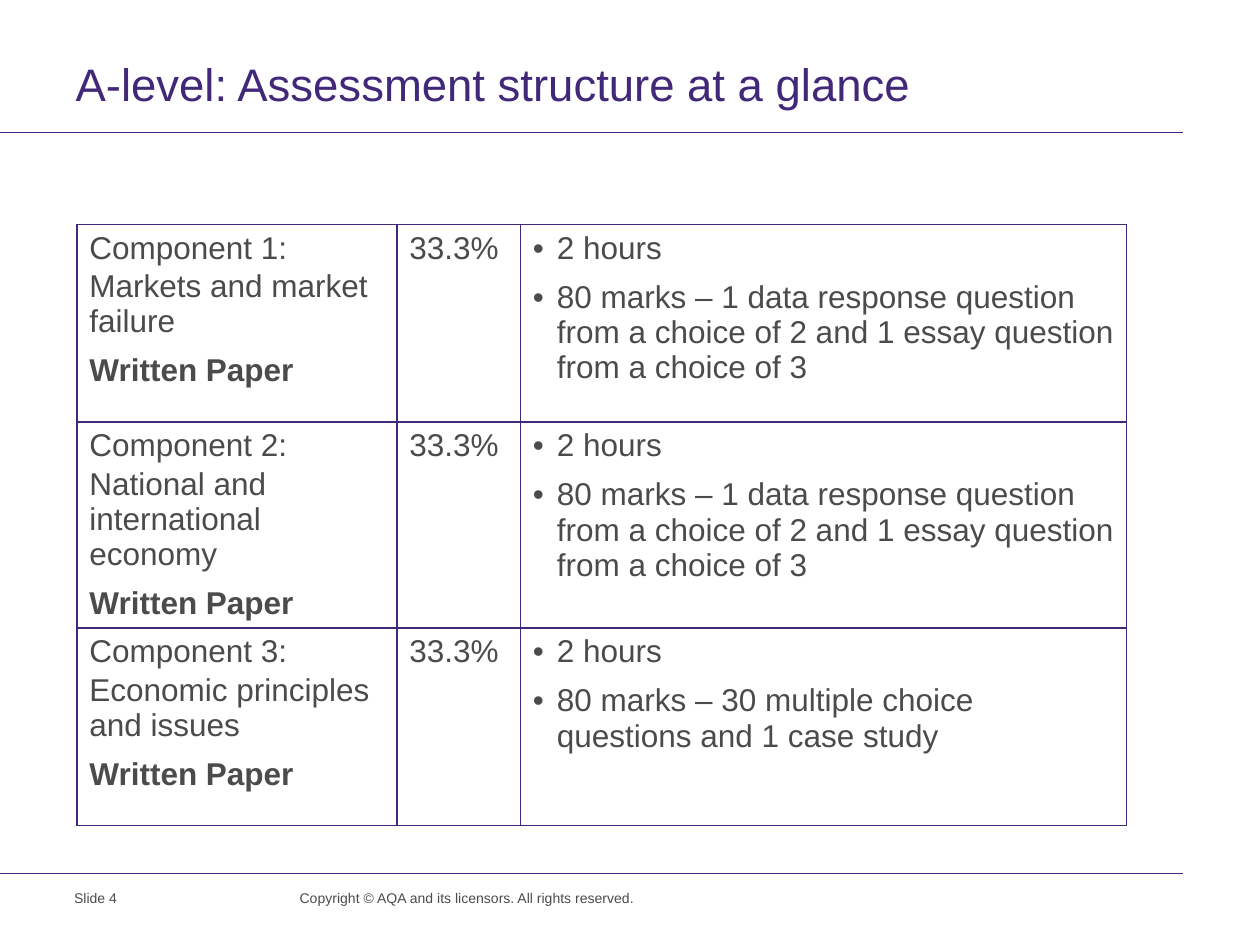
from dataclasses import dataclass

from lxml.etree import SubElement
from pptx import Presentation
from pptx.dml.color import RGBColor
from pptx.enum.shapes import MSO_CONNECTOR
from pptx.enum.text import MSO_ANCHOR, PP_ALIGN
from pptx.oxml.ns import qn
from pptx.util import Inches, Pt


@dataclass(frozen=True)
class Theme:
    font: str = "Arial"
    accent: str = "412878"
    ink: str = "4B4B4B"
    title_size: int = 26
    table_size: int = 18
    footer_size: int = 8
    rule_width: float = 0.6
    border_width: float = 1


THEME = Theme()
ESSAY_MARKS = (
    "80 marks – 1 data response question from a choice of 2 "
    "and 1 essay question from a choice of 3"
)
CASE_MARKS = "80 marks – 30 multiple choice questions and 1 case study"
COMPONENTS = [
    ("Component 1:", "Markets and market failure", ESSAY_MARKS),
    ("Component 2:", "National and international economy", ESSAY_MARKS),
    ("Component 3:", "Economic principles and issues", CASE_MARKS),
]


def style(para, size, color=THEME.ink, bold=False):
    para.font.name = THEME.font
    para.font.size = Pt(size)
    para.font.bold = bold
    para.font.color.rgb = RGBColor.from_string(color)


def add_bullet(para):
    props = para._p.get_or_add_pPr()
    props.set("marL", str(Inches(0.19)))
    props.set("indent", str(Inches(-0.19)))
    color = SubElement(props, qn("a:buClr"))
    SubElement(color, qn("a:srgbClr"), val=THEME.ink)
    SubElement(props, qn("a:buFont"), typeface=THEME.font)
    SubElement(props, qn("a:buChar"), char="•")


def add_borders(cell):
    props = cell._tc.get_or_add_tcPr()
    for side in ("L", "R", "T", "B"):
        line = SubElement(props, qn(f"a:ln{side}"), w=str(Pt(THEME.border_width)))
        fill = SubElement(line, qn("a:solidFill"))
        SubElement(fill, qn("a:srgbClr"), val=THEME.accent)


def fill_cell(cell, lines, bullets=False, bold_last=False, gap_after=None):
    add_borders(cell)
    cell.fill.background()
    frame = cell.text_frame
    for index, text in enumerate(lines):
        para = frame.add_paragraph() if index else frame.paragraphs[0]
        para.text = text
        if bullets:
            add_bullet(para)
        if index:
            para.space_before = Pt(1.8)
        if index == gap_after:
            para.space_after = Pt(6)
        style(para, THEME.table_size, bold=bold_last and index == len(lines) - 1)


def add_rule(page, left, top, width):
    rule = page.shapes.add_connector(
        MSO_CONNECTOR.STRAIGHT, left, top, left + width, top
    )
    rule.line.color.rgb = RGBColor.from_string(THEME.accent)
    rule.line.width = Pt(THEME.rule_width)
    SubElement(rule._element.spPr, qn("a:effectLst"))


def place_title(page, left, top, width, height, text):
    title = page.shapes.title
    title.left, title.top, title.width, title.height = left, top, width, height
    frame = title.text_frame
    frame.word_wrap = True
    frame.vertical_anchor = MSO_ANCHOR.MIDDLE
    para = frame.paragraphs[0]
    para.text = text
    para.alignment = PP_ALIGN.LEFT
    para.line_spacing = Pt(28)
    style(para, THEME.title_size, THEME.accent)


def add_footer_text(page, left, top, width, height, text):
    box = page.shapes.add_textbox(left, top, width, height)
    box.text_frame.word_wrap = True
    para = box.text_frame.paragraphs[0]
    para.text = text
    style(para, THEME.footer_size)


def add_assessment_table(page, left, top, width, height):
    table = page.shapes.add_table(len(COMPONENTS), 3, left, top, width, height).table
    table.first_row = table.horz_banding = False
    name_width, weight_width = Inches(2.54), Inches(0.98)
    widths = (name_width, weight_width, width - name_width - weight_width)
    for column, column_width in zip(table.columns, widths):
        column.width = column_width
    for row, (component, topic, marks) in zip(table.rows, COMPONENTS):
        name, weight, details = row.cells
        fill_cell(
            name, [component, topic, "Written Paper"], bold_last=True, gap_after=1
        )
        fill_cell(weight, ["33.3%"])
        fill_cell(details, ["2 hours", marks], bullets=True, gap_after=0)


def build_slide(deck):
    page = deck.slides.add_slide(deck.slide_layouts[5])
    for top in (1.05, 6.93):
        add_rule(page, 0, Inches(top), Inches(9.39))
    place_title(
        page, Inches(0.5), Inches(0.44), Inches(9.5), Inches(0.48),
        "A-level: Assessment structure at a glance",
    )
    add_assessment_table(page, Inches(0.61), Inches(1.78), Inches(8.33), Inches(4.71))
    add_footer_text(
        page, Inches(0.49), Inches(7.01), Inches(1.56), Inches(0.38), "Slide 4"
    )
    add_footer_text(
        page, Inches(2.28), Inches(7.01), Inches(2.93), Inches(0.26),
        "Copyright © AQA and its licensors. All rights reserved.",
    )


def main():
    deck = Presentation()
    deck.slide_width, deck.slide_height = Inches(10), Inches(7.5)
    build_slide(deck)
    deck.save("out.pptx")


if __name__ == "__main__":
    main()
